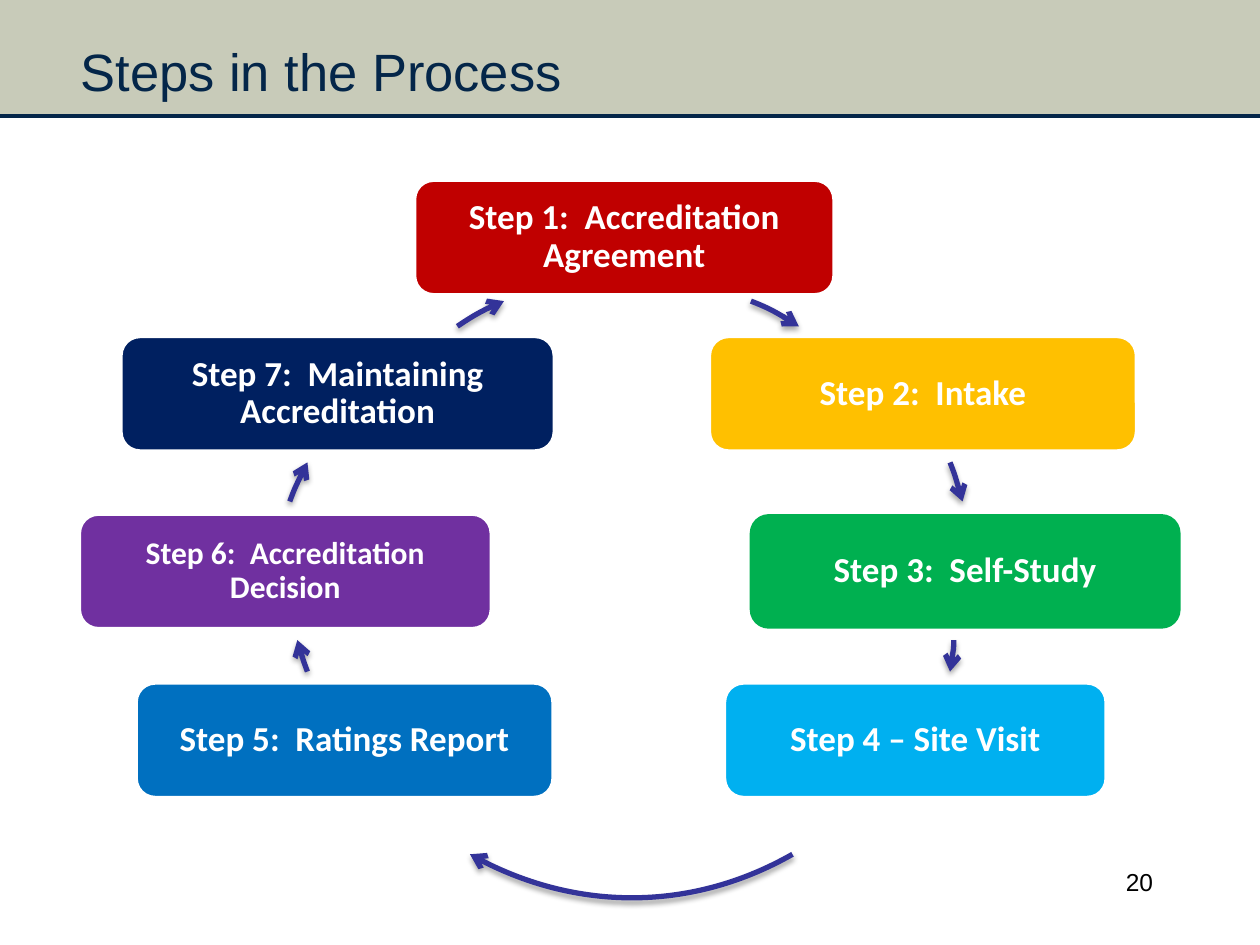
import pptx
import pptx.util
import pptx.dml.color
import pptx.enum.shapes
import pptx.enum.text
import pptx.oxml
import pptx.oxml.ns

RGBColor = pptx.dml.color.RGBColor
Align = pptx.enum.text.PP_ALIGN
Anchor = pptx.enum.text.MSO_ANCHOR
Preset = pptx.enum.shapes.MSO_SHAPE

WHITE = RGBColor(0xFF, 0xFF, 0xFF)
BLACK = RGBColor(0x00, 0x00, 0x00)
NAVY = RGBColor(0x04, 0x26, 0x49)
SAGE = RGBColor(0xC8, 0xCB, 0xB9)
INDIGO = RGBColor(0x33, 0x33, 0x99)
RED = RGBColor(0xC0, 0x00, 0x00)
AMBER = RGBColor(0xFF, 0xC0, 0x00)
GREEN = RGBColor(0x00, 0xB0, 0x50)
SKY = RGBColor(0x00, 0xB0, 0xF0)
BLUE = RGBColor(0x00, 0x70, 0xC0)
PURPLE = RGBColor(0x70, 0x30, 0xA0)
MIDNIGHT = RGBColor(0x00, 0x20, 0x60)

NAMESPACE = pptx.oxml.ns.nsdecls("a")
ARROWHEAD = f'<a:tailEnd {NAMESPACE} type="arrow"/>'
NO_EFFECT = f"<a:effectLst {NAMESPACE}/>"
SOFT_SHADOW = (
    f'<a:effectLst {NAMESPACE}><a:outerShdw blurRad="40000" dist="23000" '
    'dir="5400000" rotWithShape="0"><a:srgbClr val="000000">'
    '<a:alpha val="35000"/></a:srgbClr></a:outerShdw></a:effectLst>'
)

deck = pptx.Presentation()
deck.slide_width = pptx.util.Inches(10)
deck.slide_height = pptx.util.Inches(7.5)
column = deck.slide_width / 10
row = deck.slide_height / 7.5
slide = deck.slides.add_slide(deck.slide_layouts[5])


def place(*lengths):
    return [round(n * (row if i % 2 else column)) for i, n in enumerate(lengths)]


def write(holder, text, size, color, font="Arial", bold=False, align=Align.LEFT,
          anchor=Anchor.TOP, inset=None, spacing=None):
    frame = holder.text_frame
    frame.word_wrap = True
    frame.vertical_anchor = anchor
    if inset is not None:
        frame.margin_left = frame.margin_right = round(inset * column)
        frame.margin_top = frame.margin_bottom = round(inset * row)
    paragraph = frame.paragraphs[0]
    paragraph.alignment = align
    paragraph.line_spacing = spacing
    run = paragraph.add_run()
    run.text = text
    run.font.name = font
    run.font.size = pptx.util.Pt(size)
    run.font.bold = bold
    run.font.color.rgb = color
    return paragraph


header_height = 0.92
header = slide.shapes.add_shape(Preset.RECTANGLE, *place(0, 0, 10, header_height))
header.shadow.inherit = False
header.fill.solid()
header.fill.fore_color.rgb = SAGE
header.line.fill.background()
slide.shapes._spTree.insert(2, header._element)

heading = slide.shapes.title
heading.left, heading.top, heading.width, heading.height = place(0.42, 0.25, 8.5, 0.67)
heading_line = write(heading, "Steps in the Process", 30, NAVY)
heading_line._p.get_or_add_pPr().set("marL", str(round(0.12 * column)))
heading.text_frame.margin_top = round(0.06 * row)

header_rule = slide.shapes.add_connector(
    pptx.enum.shapes.MSO_CONNECTOR.STRAIGHT, *place(0, header_height, 10, header_height))
header_rule.line.color.rgb = NAVY
header_rule.line.width = pptx.util.Pt(2)
header_rule._element.spPr.append(pptx.oxml.parse_xml(NO_EFFECT))

page_number = slide.shapes.add_textbox(*place(7.17, 6.83, 2.08, 0.5))
write(page_number, "20", 14, BLACK, align=Align.RIGHT)

steps = [
    ("Step 1:  Accreditation Agreement", 3.29, 1.43, 3.33, RED, 20),
    ("Step 2:  Intake", 5.63, 2.67, 3.39, AMBER, 20),
    ("Step 3:  Self-Study", 5.95, 4.08, 3.42, GREEN, 20),
    ("Step 4 – Site Visit", 5.75, 5.42, 3.03, SKY, 20),
    ("Step 5:  Ratings Report", 1.08, 5.42, 3.31, BLUE, 20),
    ("Step 6:  Accreditation Decision", 0.63, 4.08, 3.27, PURPLE, 18),
    ("Step 7:  Maintaining Accreditation", 0.96, 2.67, 3.44, MIDNIGHT, 20),
]
for label, left, top, width, color, size in steps:
    step = slide.shapes.add_shape(Preset.ROUNDED_RECTANGLE, *place(left, top, width, 0.91))
    step.shadow.inherit = False
    step.fill.solid()
    step.fill.fore_color.rgb = color
    if color == GREEN:
        step.line.fill.background()
    else:
        step.line.color.rgb = WHITE
        step.line.width = pptx.util.Pt(2)
    write(step, label, size, WHITE, font="Calibri", bold=True, align=Align.CENTER,
          anchor=Anchor.MIDDLE, inset=0.08, spacing=0.9)

orbit = 5.18
arcs = [
    (2.36, 2.18, (5.96, 2.39), (6.09, 2.44), (6.22, 2.51), (6.34, 2.59)),
    (2.54, 2.04, (7.54, 3.67), (7.58, 3.77), (7.61, 3.88), (7.64, 3.98)),
    (2.41, 2.24, (7.57, 5.08), (7.57, 5.16), (7.55, 5.25), (7.54, 5.33)),
    (2.42, 1.94, (6.29, 6.78), (5.5, 7.23), (4.52, 7.23), (3.73, 6.78)),
    (2.27, 1.82, (2.44, 5.33), (2.41, 5.25), (2.38, 5.16), (2.36, 5.08)),
    (2.11, 2.35, (2.3, 3.98), (2.34, 3.87), (2.39, 3.77), (2.44, 3.67)),
    (2.46, 2.16, (3.63, 2.59), (3.75, 2.51), (3.87, 2.44), (4, 2.39)),
]
for left, top, *controls in arcs:
    builder = slide.shapes.build_freeform(*place(left, top))
    builder.add_line_segments([place(left + orbit, top + orbit)], close=False)
    arrow = builder.convert_to_shape()
    local = [place(x - left, y - top) for x, y in controls]
    start, *bend = [f'<a:pt x="{x}" y="{y}"/>' for x, y in local]
    trace = arrow._element.find(".//" + pptx.oxml.ns.qn("a:path"))
    for segment in list(trace):
        trace.remove(segment)
    for command, points in (("moveTo", start), ("cubicBezTo", "".join(bend))):
        trace.append(pptx.oxml.parse_xml(f"<a:{command} {NAMESPACE}>{points}</a:{command}>"))
    arrow.fill.background()
    arrow.line.color.rgb = INDIGO
    arrow.line.width = pptx.util.Pt(3)
    arrow.line._get_or_add_ln().append(pptx.oxml.parse_xml(ARROWHEAD))
    arrow._element.spPr.append(pptx.oxml.parse_xml(SOFT_SHADOW))

deck.save("out.pptx")
